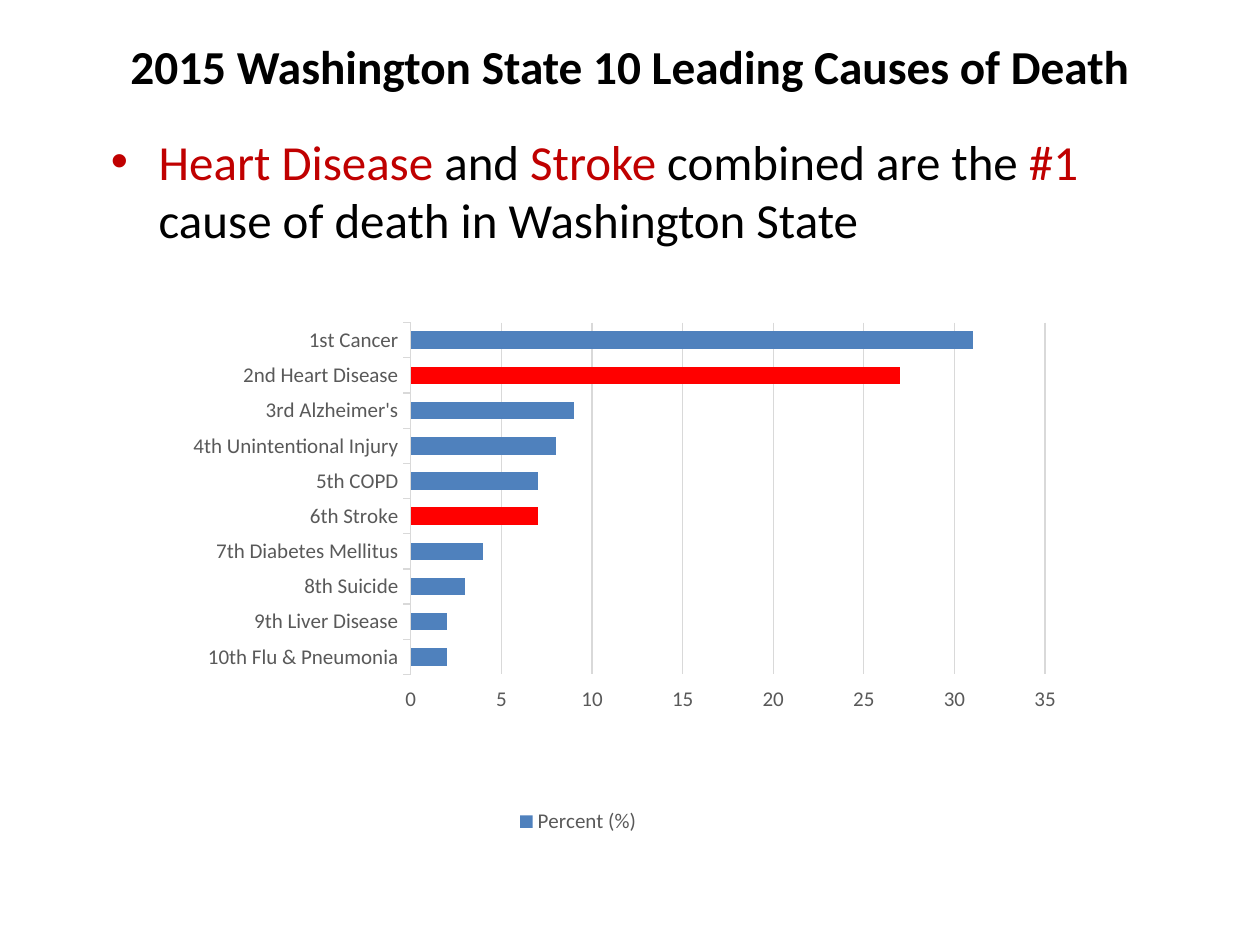
from lxml import etree
from pptx import Presentation
from pptx.chart.data import CategoryChartData
from pptx.dml.color import RGBColor
from pptx.enum.chart import XL_CHART_TYPE, XL_LEGEND_POSITION, XL_TICK_MARK
from pptx.enum.text import MSO_ANCHOR, PP_ALIGN
from pptx.oxml.ns import qn
from pptx.util import Inches, Pt

BAR_CLUSTERED = XL_CHART_TYPE.BAR_CLUSTERED
LEGEND_BOTTOM = XL_LEGEND_POSITION.BOTTOM
TICK_OUTSIDE = XL_TICK_MARK.OUTSIDE
MIDDLE, TOP = MSO_ANCHOR.MIDDLE, MSO_ANCHOR.TOP
CENTER = PP_ALIGN.CENTER

BLACK = RGBColor(0x00, 0x00, 0x00)
DARK_RED = RGBColor(0xC0, 0x00, 0x00)
BLUE = RGBColor(0x4F, 0x81, 0xBD)
RED = RGBColor(0xFF, 0x00, 0x00)
LABEL_GRAY = RGBColor(0x59, 0x59, 0x59)
LINE_GRAY = RGBColor(0xD9, 0xD9, 0xD9)


def set_font(font, size, color, bold=False):
    font.name = "Calibri"
    font.size = Pt(size)
    font.color.rgb = color
    font.bold = bold


def add_layout(parent, position, **values):
    """Put a manual layout, in fractions of the chart, into a chart part."""
    for old in parent.findall(qn("c:layout")):
        parent.remove(old)
    layout = etree.Element(qn("c:layout"))
    manual = etree.SubElement(layout, qn("c:manualLayout"))
    for tag, value in values.items():
        etree.SubElement(manual, qn("c:" + tag)).set("val", str(value))
    parent.insert(position, layout)


prs = Presentation()
prs.slide_width, prs.slide_height = Inches(10), Inches(7.5)
slide = prs.slides.add_slide(prs.slide_layouts[1])

# Title
title = slide.shapes.title
title.left, title.top = Inches(0.5), Inches(0.18)
title.width, title.height = Inches(9), Inches(0.68)
title.text_frame.text = "2015 Washington State 10 Leading Causes of Death"
title.text_frame.vertical_anchor = MIDDLE
heading = title.text_frame.paragraphs[0]
heading.alignment = CENTER
set_font(heading.runs[0].font, 27, BLACK, bold=True)

# Key message
message = slide.placeholders[1]
message.left, message.top = Inches(0.78), Inches(0.99)
message.width, message.height = Inches(8.84), Inches(1.31)
message.text_frame.vertical_anchor = TOP
message.text_frame.margin_right = Inches(0.4)
statement = message.text_frame.paragraphs[0]
statement.space_before = Pt(0)
indent = Inches(0.38)
properties = statement._p.get_or_add_pPr()
properties.set("marL", str(indent))
properties.set("indent", str(-indent))
etree.SubElement(properties, qn("a:buChar")).set("char", "•")
for words, color in [
    ("Heart Disease ", DARK_RED),
    ("and ", BLACK),
    ("Stroke", DARK_RED),
    (" combined are the ", BLACK),
    ("#1 ", DARK_RED),
    ("cause of death in Washington State", BLACK),
]:
    run = statement.add_run()
    run.text = words
    set_font(run.font, 28, color)

# Chart data, listed from the bottom bar up
causes = [
    ("10th Flu & Pneumonia", 2),
    ("9th Liver Disease", 2),
    ("8th Suicide", 3),
    ("7th Diabetes Mellitus", 4),
    ("6th Stroke", 7),
    ("5th COPD", 7),
    ("4th Unintentional Injury", 8),
    ("3rd Alzheimer's", 9),
    ("2nd Heart Disease", 27),
    ("1st Cancer", 31),
]
highlighted = ("6th Stroke", "2nd Heart Disease")
death_data = CategoryChartData()
death_data.categories = [cause for cause, percent in causes]
death_data.add_series("Percent (%)", [percent for cause, percent in causes])
chart = slide.shapes.add_chart(
    BAR_CLUSTERED, Inches(0.5), Inches(2.12), Inches(8.12), Inches(4.9), death_data
).chart
set_font(chart.font, 10, BLACK)
chart.has_title = False

# Bars
bars = chart.plots[0]
bars.gap_width = 100
bars.vary_by_categories = False
percents = bars.series[0]
percents.format.fill.solid()
percents.format.fill.fore_color.rgb = BLUE
for index, (cause, percent) in enumerate(causes):
    if cause in highlighted:
        fill = percents.points[index].format.fill
        fill.solid()
        fill.fore_color.rgb = RED

# Axes
cause_axis, percent_axis = chart.category_axis, chart.value_axis
for axis in (cause_axis, percent_axis):
    axis.major_tick_mark = TICK_OUTSIDE
    set_font(axis.tick_labels.font, 12, LABEL_GRAY)
percent_axis.minimum_scale, percent_axis.maximum_scale = 0, 35
percent_axis.major_unit = 5
percent_axis.has_major_gridlines = True
percent_axis.format.line.fill.background()
for line in (cause_axis.format.line, percent_axis.major_gridlines.format.line):
    line.color.rgb = LINE_GRAY
    line.width = Pt(0.75)

# Legend
chart.has_legend = True
chart.legend.position = LEGEND_BOTTOM
chart.legend.include_in_layout = False
set_font(chart.legend.font, 12, LABEL_GRAY)

# Places of the plot and the legend within the chart
plot_area = chart._chartSpace.chart.plotArea
add_layout(plot_area, 0, layoutTarget="inner", xMode="edge", yMode="edge",
           x=0.34, y=0.09, w=0.62, h=0.57)
add_layout(chart.legend._element, 1, xMode="edge", yMode="edge", x=0.44, y=0.87)

prs.save("out.pptx")
